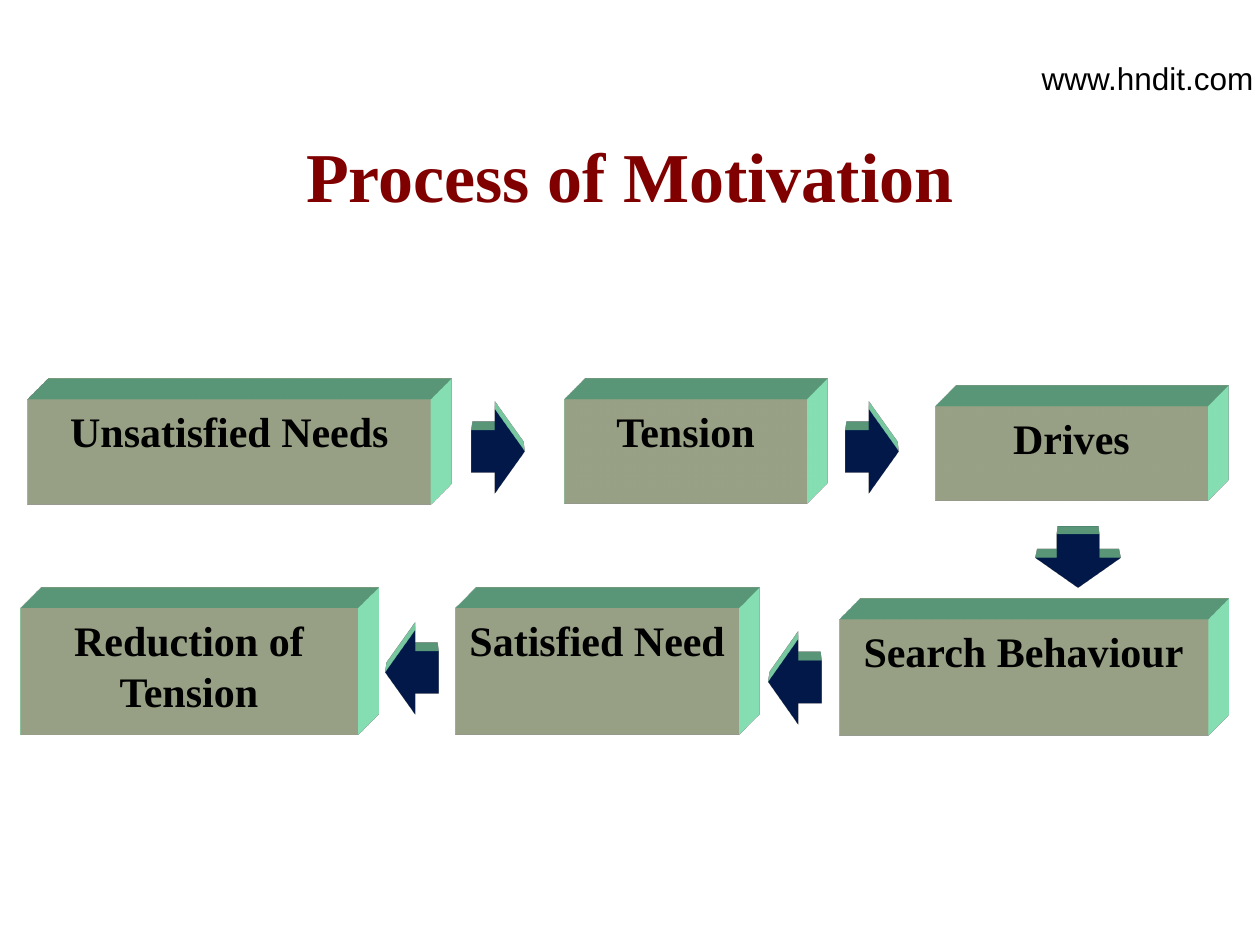
import pptx
import pptx.dml.color
import pptx.enum.shapes
import pptx.enum.text
import pptx.oxml
import pptx.util
from pptx.util import Cm

SHAPE = pptx.enum.shapes.MSO_SHAPE
ALIGN = pptx.enum.text.PP_ALIGN
NS = 'xmlns:a="http://schemas.openxmlformats.org/drawingml/2006/main"'
SERIF = "Times New Roman"

# Stages in reading order: text, left, top, width, height in cm
STAGES = [
    ("Unsatisfied Needs", 0.56, 8.05, 8.13, 2.12),
    ("Tension", 11.38, 8.06, 4.88, 2.09),
    ("Drives", 18.85, 8.2, 5.5, 1.9),
    ("Search Behaviour", 16.93, 12.49, 7.41, 2.33),
    ("Satisfied Need", 9.18, 12.27, 5.72, 2.54),
    ("Reduction of Tension", 0.42, 12.27, 6.78, 2.54),
]
# Arrows between the stages: left, top in cm, rotation in degrees
ARROWS = [
    (9.5, 8.26, 0),
    (17.04, 8.26, 0),
    (21.2, 10.46, 90),
    (15.49, 12.9, 180),
    (7.77, 12.7, 180),
]


def color(hex_code):
    return pptx.dml.color.RGBColor.from_string(hex_code)


def write_text(shape, text, *, size, font=SERIF, hex_code="000000",
               bold=False, align=ALIGN.CENTER):
    frame = shape.text_frame
    frame.word_wrap = True
    frame.vertical_anchor = pptx.enum.text.MSO_ANCHOR.TOP
    paragraph = frame.paragraphs[0]
    paragraph.alignment = align
    run = paragraph.add_run()
    run.text = text
    run.font.name = font
    run.font.size = pptx.util.Pt(size)
    run.font.bold = bold
    run.font.color.rgb = color(hex_code)


def extrude(shape, camera):
    """Give the shape a mint-green depth, seen from the given camera."""
    properties = shape.element.spPr
    for xml in (
        f'<a:scene3d {NS}><a:camera prst="{camera}"/>'
        '<a:lightRig rig="legacyFlat3" dir="b"/></a:scene3d>',
        f'<a:sp3d {NS} extrusionH="430200" prstMaterial="legacyMatte">'
        '<a:extrusionClr><a:srgbClr val="99FFCC"/></a:extrusionClr></a:sp3d>',
    ):
        properties.append(pptx.oxml.parse_xml(xml))


def add_solid(slide, kind, left, top, width, height, fill, camera):
    shape = slide.shapes.add_shape(kind, Cm(left), Cm(top), Cm(width), Cm(height))
    shape.fill.solid()
    shape.fill.fore_color.rgb = color(fill)
    shape.line.fill.background()
    shape.shadow.inherit = False
    extrude(shape, camera)
    return shape


def add_stage(slide, text, left, top, width, height):
    stage = add_solid(slide, SHAPE.RECTANGLE, left, top, width, height,
                      "D7E4BD", "legacyObliqueTopRight")
    write_text(stage, text, size=24, bold=True)


def add_arrow(slide, left, top, rotation):
    arrow = add_solid(slide, SHAPE.RIGHT_ARROW, left, top, 1.07, 1.7,
                      "002060", "legacyPerspectiveTop")
    arrow.adjustments[1] = 0.56
    arrow.rotation = rotation


def add_label(slide, text, left, top, width, height, **text_format):
    label = slide.shapes.add_textbox(Cm(left), Cm(top), Cm(width), Cm(height))
    write_text(label, text, **text_format)


def main():
    deck = pptx.Presentation()
    deck.slide_width, deck.slide_height = Cm(25.4), Cm(19.05)
    slide = deck.slides.add_slide(deck.slide_layouts[6])

    # Heading and web address
    add_label(slide, "Process of Motivation", 0, 2.54, 25.4, 1.96,
              size=40, bold=True, hex_code="800000")
    add_label(slide, "www.hndit.com", 20.75, 1.07, 6.15, 1.27,
              size=18, font="Arial", align=ALIGN.LEFT)

    # Process flow
    for stage in STAGES:
        add_stage(slide, *stage)
    for arrow in ARROWS:
        add_arrow(slide, *arrow)

    deck.save("out.pptx")


if __name__ == "__main__":
    main()
